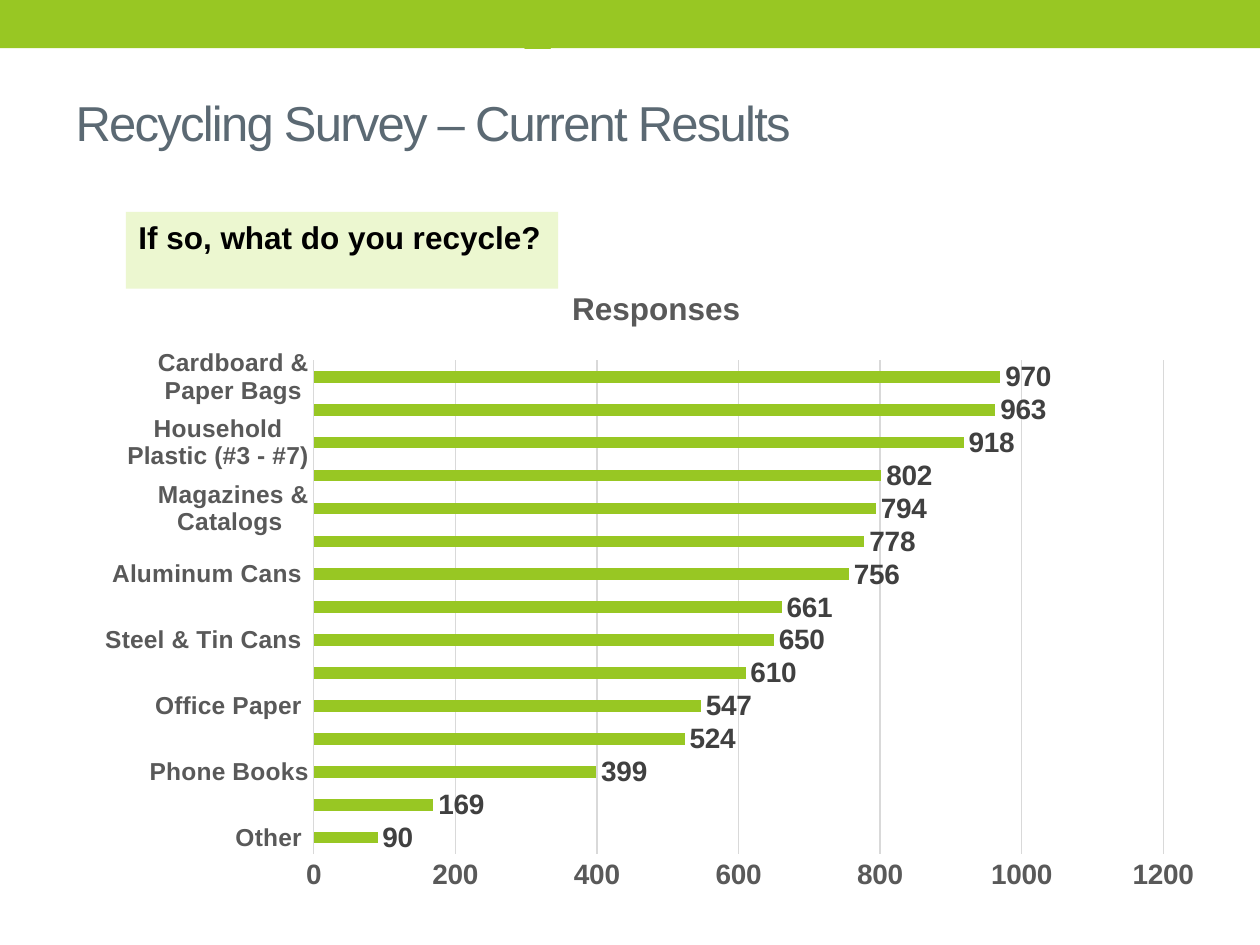
import pptx
import pptx.chart.data
import pptx.dml.color
import pptx.enum.chart
import pptx.enum.shapes
import pptx.enum.text
import pptx.util
from pptx.util import Pt

COLORS = {
    "green": "98C723",
    "pale green": "ECF7D0",
    "slate": "5B6973",
    "axis text": "595959",
    "label text": "404040",
    "grid": "D9D9D9",
    "black": "000000",
}


def rgb(name):
    return pptx.dml.color.RGBColor.from_string(COLORS[name])


def set_font(font, size, color, bold=True):
    font.name = "Arial"
    font.size = Pt(size)
    font.bold = bold
    font.color.rgb = rgb(color)


presentation = pptx.Presentation()
presentation.slide_width = Pt(720)
presentation.slide_height = Pt(540)
slide = presentation.slides.add_slide(presentation.slide_layouts[5])

# Top band with its small tab, and the question box
rectangles = []
for left, top, width, height, color in [
    (-0.5, -1.5, 720.5, 29, "green"),
    (300, 6, 14.5, 21.5, "green"),
    (72, 121, 247, 43.9, "pale green"),
]:
    shape = slide.shapes.add_shape(
        pptx.enum.shapes.MSO_SHAPE.RECTANGLE, Pt(left), Pt(top), Pt(width), Pt(height)
    )
    shape.shadow.inherit = False
    shape.fill.solid()
    shape.fill.fore_color.rgb = rgb(color)
    shape.line.fill.background()
    rectangles.append(shape)
band, tab, question = rectangles
tab.line.color.rgb = rgb("green")
tab.line.width = Pt(0.75)

question.text_frame.text = "If so, what do you recycle?"
question.text_frame.word_wrap = False
question.text_frame.vertical_anchor = pptx.enum.text.MSO_ANCHOR.TOP
paragraph = question.text_frame.paragraphs[0]
paragraph.alignment = pptx.enum.text.PP_ALIGN.LEFT
set_font(paragraph.font, 18, "black")

# Title
title = slide.shapes.title
title.left, title.top, title.width, title.height = Pt(36), Pt(30.5), Pt(648), Pt(78)
title.text_frame.text = "Recycling Survey – Current Results"
title.text_frame.vertical_anchor = pptx.enum.text.MSO_ANCHOR.MIDDLE
title.text_frame.auto_size = pptx.enum.text.MSO_AUTO_SIZE.NONE
paragraph = title.text_frame.paragraphs[0]
paragraph.alignment = pptx.enum.text.PP_ALIGN.LEFT
set_font(paragraph.font, 28, "slate", bold=False)
paragraph.runs[0].font._element.set("spc", "-100")

# Survey chart, listed from the bottom bar up
responses = {
    "Other ": 90,
    "Pots & Pans ": 169,
    "Phone Books": 399,
    "Paperboard": 524,
    "Office Paper ": 547,
    "Newspapers ": 610,
    "Steel & Tin Cans ": 650,
    "Paper Milk or Juice Cartons ": 661,
    "Aluminum Cans ": 756,
    "Junk Mail ": 778,
    "Magazines & Catalogs ": 794,
    "Clear & Colored Glass ": 802,
    "Household Plastic (#3 - #7)": 918,
    "Plastic Jugs/Bottles (#1 & #2)": 963,
    "Cardboard & Paper Bags": 970,
}
chart_data = pptx.chart.data.CategoryChartData()
chart_data.categories = list(responses)
chart_data.add_series("Responses ", list(responses.values()))
chart = slide.shapes.add_chart(
    pptx.enum.chart.XL_CHART_TYPE.BAR_CLUSTERED,
    Pt(60), Pt(150), Pt(635), Pt(365.5), chart_data,
).chart
set_font(chart.font, 10, "black", bold=False)
chart.has_legend = False
chart.has_title = True
chart.chart_title.include_in_layout = False
chart.chart_title.text_frame.text = "Responses "
set_font(chart.chart_title.text_frame.paragraphs[0].font, 18, "axis text")

# Bars and their values
plot = chart.plots[0]
plot.gap_width = 182
plot.vary_by_categories = False
series = plot.series[0]
series.format.fill.solid()
series.format.fill.fore_color.rgb = rgb("green")
labels = series.data_labels
labels.show_value = True
labels.position = pptx.enum.chart.XL_LABEL_POSITION.OUTSIDE_END
set_font(labels.font, 16, "label text")

# Axes
for axis, size in [(chart.category_axis, 14), (chart.value_axis, 16)]:
    axis.major_tick_mark = pptx.enum.chart.XL_TICK_MARK.NONE
    axis.minor_tick_mark = pptx.enum.chart.XL_TICK_MARK.NONE
    set_font(axis.tick_labels.font, size, "axis text")
chart.value_axis.minimum_scale = 0
chart.value_axis.maximum_scale = 1200
chart.value_axis.major_unit = 200
chart.value_axis.has_major_gridlines = True
chart.value_axis.format.line.fill.background()
for line in [chart.category_axis.format.line, chart.value_axis.major_gridlines.format.line]:
    line.color.rgb = rgb("grid")
    line.width = Pt(0.75)

presentation.save("out.pptx")
